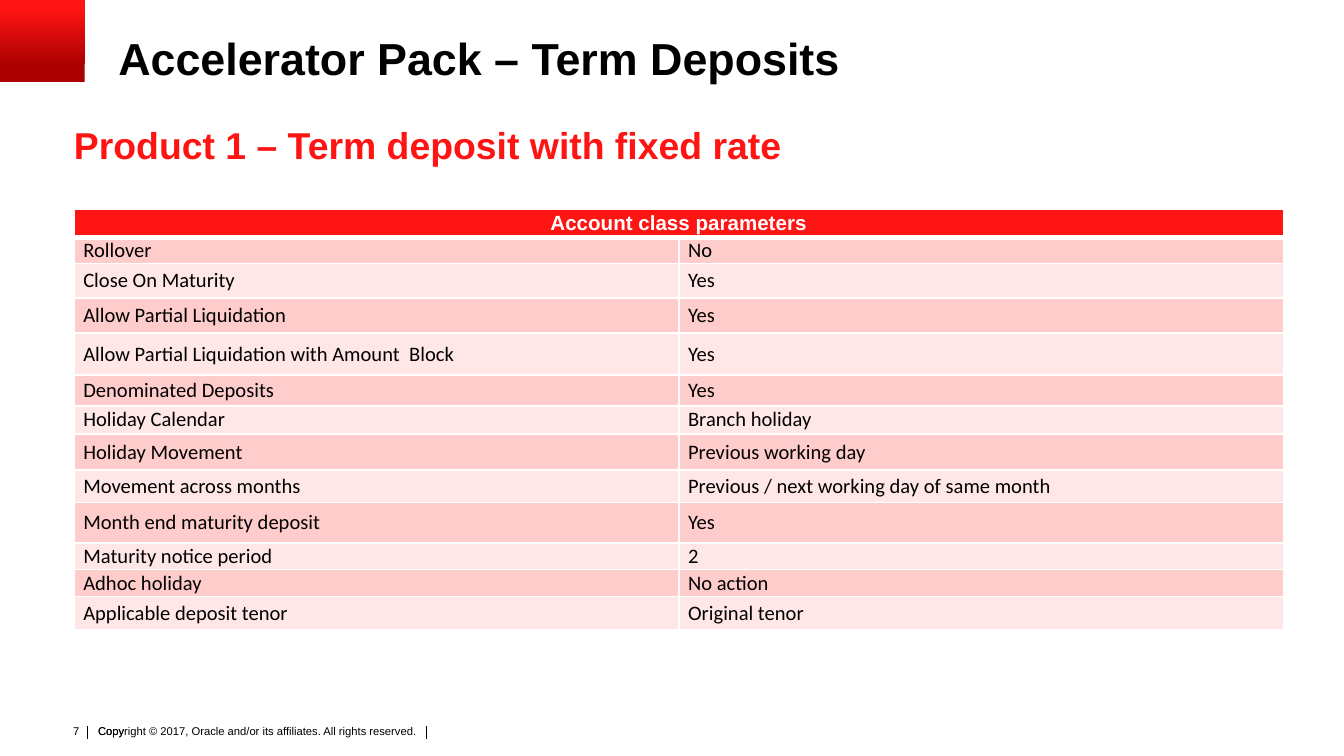
from pptx import Presentation
from pptx.dml.color import RGBColor
from pptx.enum import shapes, text
from pptx.oxml import parse_xml
from pptx.oxml.ns import nsdecls
from pptx.util import Inches, Pt

TITLE = "Accelerator Pack – Term Deposits"
SUBTITLE = "Product 1 – Term deposit with fixed rate"
TABLE_HEADER = ("Account class parameters", 0.21)
PARAMETERS = [  # name, value, row height
    ("Rollover", "No", 0.19),
    ("Close On Maturity", "Yes", 0.26),
    ("Allow Partial Liquidation", "Yes", 0.26),
    ("Allow Partial Liquidation with Amount  Block", "Yes", 0.31),
    ("Denominated Deposits", "Yes", 0.23),
    ("Holiday Calendar", "Branch holiday", 0.21),
    ("Holiday Movement", "Previous working day", 0.27),
    ("Movement across months", "Previous / next working day of same month", 0.24),
    ("Month end maturity deposit", "Yes", 0.3),
    ("Maturity notice period", "2", 0.2),
    ("Adhoc holiday", "No action", 0.2),
    ("Applicable deposit tenor", "Original tenor", 0.25),
]
PAGE_NUMBER = "7"
COPYRIGHT = "Copyright © 2017, Oracle and/or its affiliates. All rights reserved."
COPYRIGHT_EMPHASIS = "Copy"  # set twice in the footer, so it looks heavier

THEME = {
    "heading_font": "Arial", "body_font": "Calibri",
    "black": "000000", "white": "FFFFFF", "red": "FF1414", "dark_red": "AA0000",
    "bands": ("FFCCCC", "FFE7E7"),
    "title_size": 24, "subtitle_size": 20, "table_size": 11, "footer_size": 6,
}
SLIDE_WIDTH = Inches(10)
SLIDE_HEIGHT = SLIDE_WIDTH * 9 // 16
LEFT, CONTENT_WIDTH = 0.55, 9
FOOTER_RULES = (0.65, 3.17)


def color(value):
    return RGBColor.from_string(value)


def set_values(target, **values):
    for name, value in values.items():
        setattr(target, name, value)


def place(shape, left, top, width, height):
    set_values(shape, left=Inches(left), top=Inches(top),
               width=Inches(width), height=Inches(height))


def write(frame, words, size, font_color, font="heading_font", bold=False,
          **paragraph_format):
    paragraph = frame.paragraphs[0]
    paragraph.text = words
    set_values(paragraph, **paragraph_format)
    run_font = paragraph.runs[0].font
    set_values(run_font, name=THEME[font], size=Pt(THEME[size]), bold=bold)
    run_font.color.rgb = color(font_color)


def set_margins(target, horizontal, vertical):
    set_values(target, margin_left=Inches(horizontal), margin_right=Inches(horizontal),
               margin_top=Inches(vertical), margin_bottom=Inches(vertical))


def add_corner_square(slide):
    square = slide.shapes.add_shape(shapes.MSO_SHAPE.RECTANGLE, 0, 0,
                                    Inches(0.63), Inches(0.61))
    square.shadow.inherit = False
    square.line.fill.background()
    square.fill.gradient()
    square.fill.gradient_angle = 90
    stops = ((0.2, THEME["dark_red"]), (0.9, THEME["red"]))
    for stop, (position, value) in zip(square.fill.gradient_stops, stops):
        stop.position = position
        stop.color.rgb = color(value)


def add_footer(slide):
    for words in (COPYRIGHT, COPYRIGHT_EMPHASIS):
        box = slide.shapes.add_textbox(Inches(0.69), Inches(5.37), Inches(2.74), Inches(0.24))
        box.text_frame.word_wrap = True
        set_margins(box.text_frame, 0.04, 0.02)
        write(box.text_frame, words, "footer_size", THEME["black"])
    number = slide.shapes.add_textbox(Inches(0.39), Inches(5.34), Inches(0.3), Inches(0.2))
    number.text_frame.word_wrap = False
    write(number.text_frame, PAGE_NUMBER, "footer_size", THEME["black"],
          alignment=text.PP_ALIGN.RIGHT)
    for x in FOOTER_RULES:
        rule = slide.shapes.add_connector(shapes.MSO_CONNECTOR.STRAIGHT, Inches(x),
                                          Inches(5.4), Inches(x), Inches(5.5))
        rule.line.width = Pt(0.5)
        rule.line.color.rgb = color(THEME["black"])
        rule._element.spPr.append(parse_xml(f"<a:effectLst {nsdecls('a')}/>"))


def add_headings(slide):
    title, subtitle = slide.shapes.title, slide.placeholders[1]
    place(title, 0.88, 0.27, CONTENT_WIDTH, 0.44)
    place(subtitle, LEFT, 0.91, CONTENT_WIDTH, 0.33)
    for shape in (title, subtitle):
        set_margins(shape.text_frame, 0, 0)
        set_values(shape.text_frame, word_wrap=True, auto_size=text.MSO_AUTO_SIZE.NONE,
                   vertical_anchor=text.MSO_ANCHOR.TOP)
    properties = subtitle.text_frame.paragraphs[0]._p.get_or_add_pPr()
    properties.set("marL", "0")
    properties.set("indent", "0")
    properties.append(parse_xml(f"<a:buNone {nsdecls('a')}/>"))
    common = dict(bold=True, alignment=text.PP_ALIGN.LEFT, space_before=Pt(0))
    write(title.text_frame, TITLE, "title_size", THEME["black"], line_spacing=0.9, **common)
    write(subtitle.text_frame, SUBTITLE, "subtitle_size", THEME["red"], **common)


def set_borders(cell, top, bottom):
    """Draw white borders; they must come before the fill in the cell's XML."""
    properties = cell._tc.get_or_add_tcPr()
    for index, (side, width) in enumerate(zip("LRTB", (1, 1, top, bottom))):
        properties.insert(index, parse_xml(
            f'<a:ln{side} {nsdecls("a")} w="{Pt(width)}"><a:solidFill>'
            f'<a:srgbClr val="{THEME["white"]}"/></a:solidFill></a:ln{side}>'))


def add_parameter_table(slide):
    header, header_height = TABLE_HEADER
    heights = [header_height] + [height for _, _, height in PARAMETERS]
    table = slide.shapes.add_table(len(heights), 2, Inches(LEFT), Inches(1.56),
                                   Inches(CONTENT_WIDTH), Inches(sum(heights))).table
    for row, height in zip(table.rows, heights):
        row.height = Inches(height)
    table.cell(0, 0).merge(table.cell(0, 1))
    rows = [(header, "")] + [(name, value) for name, value, _ in PARAMETERS]
    for row_index, row in enumerate(rows):
        is_header = row_index == 0
        for column, words in enumerate(row):
            cell = table.cell(row_index, column)
            set_margins(cell, 0.07, 0)
            cell.vertical_anchor = text.MSO_ANCHOR.MIDDLE
            cell.fill.solid()
            band = THEME["bands"][(row_index - 1) % 2]
            cell.fill.fore_color.rgb = color(THEME["red"] if is_header else band)
            set_borders(cell, 3 if row_index == 1 else 1, 3 if is_header else 1)
            if not words:
                continue
            write(cell.text_frame, words, "table_size",
                  THEME["white"] if is_header else THEME["black"],
                  font="heading_font" if is_header else "body_font", bold=is_header,
                  alignment=text.PP_ALIGN.CENTER if is_header else text.PP_ALIGN.LEFT,
                  space_after=Pt(10))


def main():
    presentation = Presentation()
    set_values(presentation, slide_width=SLIDE_WIDTH, slide_height=SLIDE_HEIGHT)
    slide = presentation.slides.add_slide(presentation.slide_layouts[1])
    add_footer(slide)
    add_corner_square(slide)
    add_headings(slide)
    add_parameter_table(slide)
    presentation.save("out.pptx")


if __name__ == "__main__":
    main()
